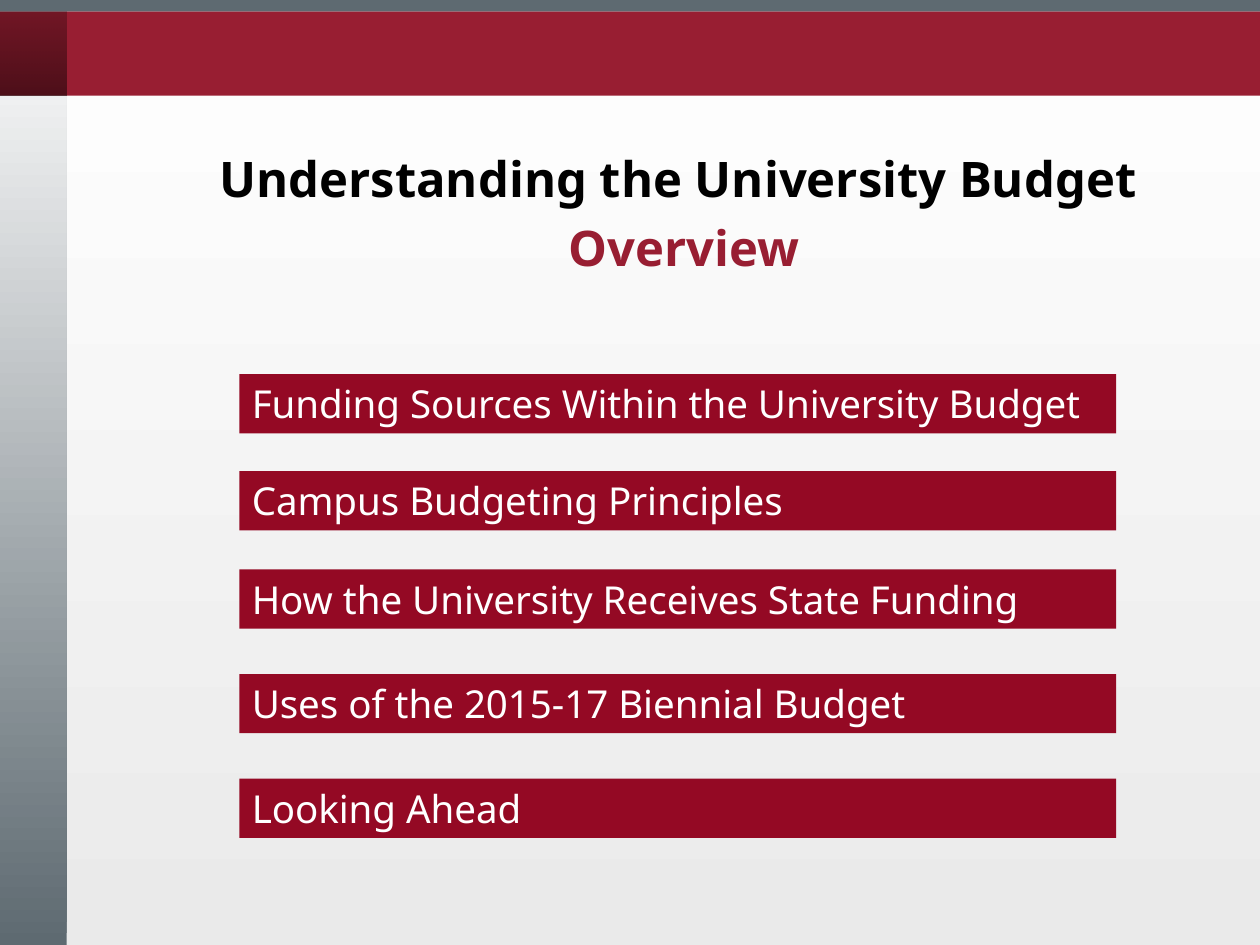
import pptx
import pptx.util
import pptx.enum.shapes
import pptx.enum.text
import pptx.dml.color
import lxml.etree
import pptx.oxml.ns

WIDE, HIGH = 10, 7.5
FONT = "Noto Sans"
HUES = {
    "red": "981E32",
    "bar": "940924",
    "slate": "5E6A71",
    "pale": "EAEAEA",
    "white": "FFFFFF",
    "black": "000000",
}
# Topic and the top of its bar
TOPICS = [
    ("Funding Sources Within the University Budget", 2.97),
    ("Campus Budgeting Principles", 3.74),
    ("How the University Receives State Funding", 4.52),
    ("Uses of the 2015-17 Biennial Budget", 5.35),
    ("Looking Ahead", 6.18),
]


def inch(size):
    return pptx.util.Inches(size)


def rgb(hue):
    return pptx.dml.color.RGBColor.from_string(HUES[hue])


def fade(fill, low, top):
    """Fill with a gradient that rises from low to top."""
    fill.gradient()
    fill.gradient_angle = 90
    for stop, hue, place in zip(fill.gradient_stops, (low, top), (0, 1)):
        stop.color.rgb = rgb(hue)
        stop.position = place


def sheer(shape, shares):
    """Set the opacity, in percent, of each gradient stop."""
    tags = shape.element.iter(pptx.oxml.ns.qn("a:srgbClr"))
    for tag, share in zip(tags, shares):
        alpha = lxml.etree.SubElement(tag, pptx.oxml.ns.qn("a:alpha"))
        alpha.set("val", str(share * 1000))


def block(slide, left, top, wide, high, hue=None):
    kind = pptx.enum.shapes.MSO_SHAPE.RECTANGLE
    shape = slide.shapes.add_shape(
        kind, inch(left), inch(top), inch(wide), inch(high))
    shape.shadow.inherit = False
    shape.line.fill.background()
    if hue:
        shape.fill.solid()
        shape.fill.fore_color.rgb = rgb(hue)
    return shape


def style(para, size, hue, bold=False):
    for run in para.runs:
        run.font.name = FONT
        run.font.size = pptx.util.Pt(size)
        run.font.bold = bold
        run.font.color.rgb = rgb(hue)


def frame(slide):
    # Page and side strip
    fade(slide.background.fill, "pale", "white")
    side = block(slide, 0, 0, 0.53, HIGH)
    fade(side.fill, "slate", "white")
    # Header band with its shaded corner, and the top edge
    block(slide, 0, 0.09, WIDE, 0.67, "red")
    shade = block(slide, -0.02, 0.09, 0.55, 0.67)
    fade(shade.fill, "black", "black")
    sheer(shade, (50, 25))
    block(slide, -0.02, 0, WIDE + 0.02, 0.09, "slate")


def title(slide):
    box = slide.shapes.add_textbox(
        inch(1.02), inch(1.18), inch(8.72), inch(1.07))
    text = box.text_frame
    text.word_wrap = True
    text.vertical_anchor = pptx.enum.text.MSO_ANCHOR.BOTTOM
    text.margin_left = text.margin_right = inch(0.5)
    text.text = "Understanding the University Budget\n Overview"
    for para, hue in zip(text.paragraphs, ("black", "red")):
        para.alignment = pptx.enum.text.PP_ALIGN.CENTER
        para.line_spacing = 0.9
        para.space_before = pptx.util.Pt(9)
        style(para, 28, hue, True)


def topic(slide, words, top):
    bar = block(slide, 1.9, top, 6.96, 0.47, "bar")
    text = bar.text_frame
    text.word_wrap = True
    text.vertical_anchor = pptx.enum.text.MSO_ANCHOR.TOP
    text.text = words
    para = text.paragraphs[0]
    para.alignment = pptx.enum.text.PP_ALIGN.LEFT
    style(para, 22, "white")


def main():
    deck = pptx.Presentation()
    deck.slide_width, deck.slide_height = inch(WIDE), inch(HIGH)
    slide = deck.slides.add_slide(deck.slide_layouts[6])
    frame(slide)
    title(slide)
    for words, top in TOPICS:
        topic(slide, words, top)
    deck.save("out.pptx")


if __name__ == "__main__":
    main()
